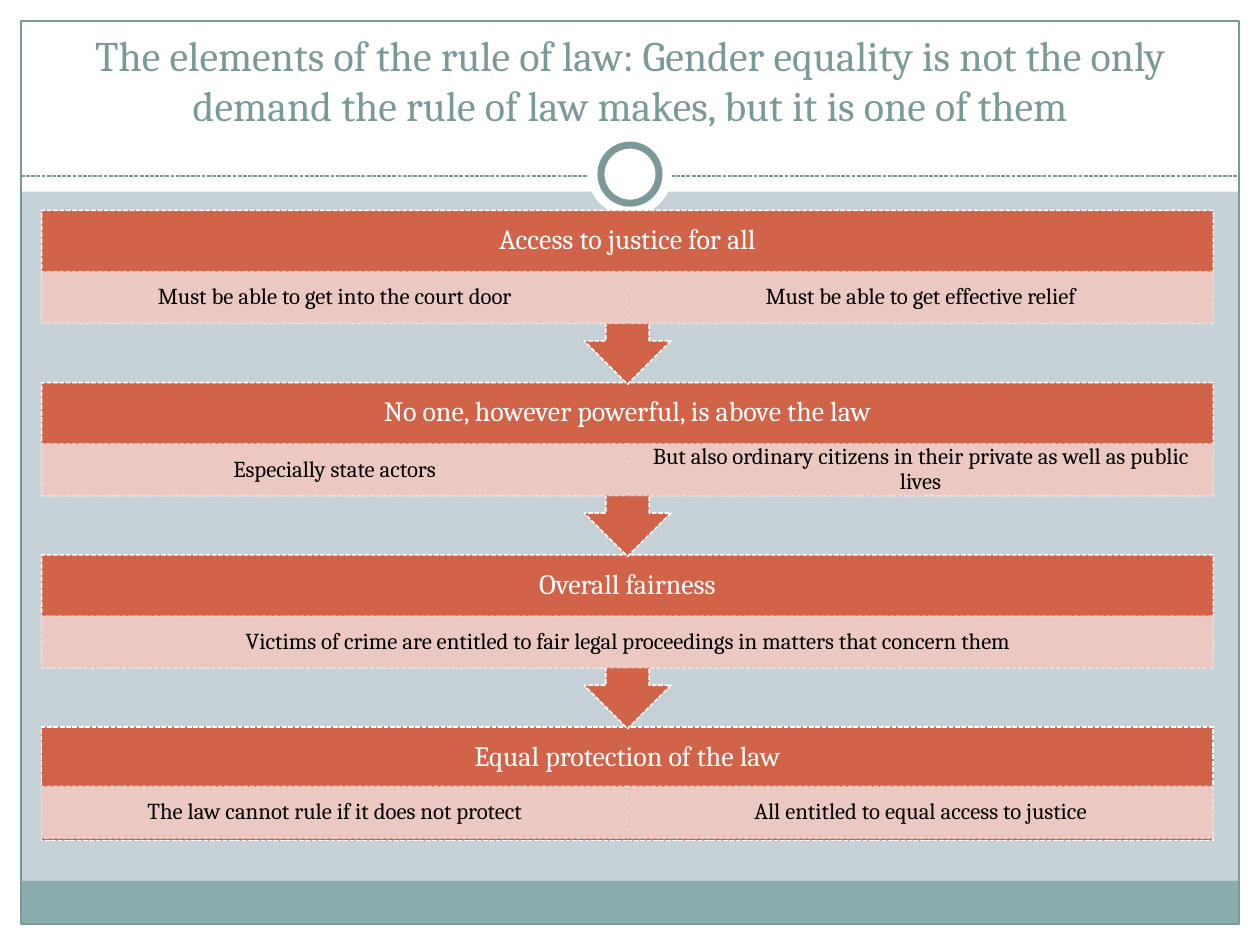
"""Build a slide that shows the elements of the rule of law as four linked steps."""
from lxml.etree import SubElement
from pptx import Presentation
from pptx.dml.color import RGBColor
from pptx.enum.dml import MSO_LINE
from pptx.enum.shapes import MSO_CONNECTOR, MSO_SHAPE
from pptx.enum.text import MSO_ANCHOR, MSO_AUTO_SIZE, PP_ALIGN
from pptx.oxml.ns import qn
from pptx.util import Pt

COLORS = {
    "backdrop": "C5D1D7",
    "white": "FFFFFF",
    "black": "000000",
    "slate": "7C999A",
    "teal": "8CADAE",
    "rust": "D16349",
    "blush": "EED3D0",
}
STEPS = [
    ("Access to justice for all",
     ["Must be able to get into the court door", "Must be able to get effective relief"]),
    ("No one, however powerful, is above the law",
     ["Especially state actors",
      "But also ordinary citizens in their private as well as public lives"]),
    ("Overall fairness",
     ["Victims of crime are entitled to fair legal proceedings in matters that concern them"]),
    ("Equal protection of the law",
     ["The law cannot rule if it does not protect", "All entitled to equal access to justice"]),
]
LEFT, TOP, WIDTH, PITCH = 23.76, 120.24, 669.6, 98.4
CALLOUT_HEIGHT, PANEL_HEIGHT, DETAIL_HEIGHT = 99.36, 64.8, 29.52


class Deck:
    """Hold the style and the current slide."""

    font = "Cambria"

    def __init__(self, width, height):
        """Open a title-only slide of the given size."""
        self.presentation = Presentation()
        self.presentation.slide_width = Pt(width)
        self.presentation.slide_height = Pt(height)
        self.slide = self.presentation.slides.add_slide(self.presentation.slide_layouts[5])
        backdrop = self.slide.background.fill
        backdrop.solid()
        backdrop.fore_color.rgb = self.color("backdrop")

    def color(self, name):
        """Look up a named colour."""
        return RGBColor.from_string(COLORS[name])

    def label(self, holder, text, size, color, anchor=MSO_ANCHOR.MIDDLE, margins=(7.2, 3.6),
              spacing=0.9):
        """Set centred text in a shape."""
        frame = holder.text_frame
        frame.text = text
        frame.word_wrap = True
        frame.auto_size = MSO_AUTO_SIZE.NONE
        frame.vertical_anchor = anchor
        frame.margin_left = frame.margin_right = Pt(margins[0])
        frame.margin_top = frame.margin_bottom = Pt(margins[1])
        paragraph = frame.paragraphs[0]
        paragraph.alignment = PP_ALIGN.CENTER
        paragraph.line_spacing = spacing
        paragraph.font.name = self.font
        paragraph.font.size = Pt(size)
        paragraph.font.color.rgb = self.color(color)

    def stroke(self, line, color, weight, dashed):
        """Style a line or an outline."""
        line.color.rgb = self.color(color)
        line.width = Pt(weight)
        if dashed:
            line.dash_style = MSO_LINE.SQUARE_DOT

    def shape(self, kind, box, fill=None, line=None, weight=0.9, dashed=False):
        """Add a preset shape."""
        shape = self.slide.shapes.add_shape(kind, *map(Pt, box))
        shape.shadow.inherit = False
        if fill:
            shape.fill.solid()
            shape.fill.fore_color.rgb = self.color(fill)
        else:
            shape.fill.background()
        if line:
            self.stroke(shape.line, line, weight, dashed)
        else:
            shape.line.fill.background()
        return shape

    def rule(self, left, right, y):
        """Add a dashed horizontal rule."""
        rule = self.slide.shapes.add_connector(
            MSO_CONNECTOR.STRAIGHT, Pt(left), Pt(y), Pt(right), Pt(y))
        self.stroke(rule.line, "slate", 0.75, True)
        SubElement(rule.element.spPr, qn("a:effectLst"))

    def title(self, text, box):
        """Fill the title and bring it to the front."""
        title = self.slide.shapes.title
        title.left, title.top, title.width, title.height = map(Pt, box)
        self.label(title, text, 24, "slate", MSO_ANCHOR.BOTTOM, spacing=1)
        title.element.getparent().append(title.element)

    def heading(self, text, box):
        """Add the heading of a step."""
        heading = self.slide.shapes.add_textbox(*map(Pt, box))
        self.label(heading, text, 16, "white", margins=(8.64, 8.64))

    def detail(self, text, box):
        """Add a slightly see-through detail cell."""
        cell = self.shape(MSO_SHAPE.RECTANGLE, box, "blush", "blush", dashed=True)
        for tint in cell.element.spPr.iter(qn("a:srgbClr")):
            SubElement(tint, qn("a:alpha"), val="90000")
        self.label(cell, text, 13, "black", margins=(7.2, 1.44))

    def step(self, top, heading, details, last):
        """Add a step, with an arrow to the next one unless it is the last."""
        kind = MSO_SHAPE.RECTANGLE if last else MSO_SHAPE.UP_ARROW_CALLOUT
        height = PANEL_HEIGHT if last else CALLOUT_HEIGHT
        panel = self.shape(kind, (LEFT, top, WIDTH, height), "rust", "white", dashed=True)
        panel.rotation = 0 if last else 180
        self.heading(heading, (LEFT, top, WIDTH, 34.56))
        detail_top = top + (34 if last else 35)
        cell_width = WIDTH / len(details)
        for column, text in enumerate(details):
            self.detail(text, (LEFT + column * cell_width, detail_top, cell_width, DETAIL_HEIGHT))


def main():
    """Build and save the slide."""
    deck = Deck(720, 540)
    for border in [(0, 528, 720, 12), (0, 0, 720, 109.5), (0, 0, 12, 540), (708, 0, 12, 540)]:
        deck.shape(MSO_SHAPE.RECTANGLE, border, "white")
    deck.shape(MSO_SHAPE.RECTANGLE, (12, 503.3, 696, 24.7), "teal")
    deck.shape(MSO_SHAPE.RECTANGLE, (12, 12, 696, 516), line="slate", weight=0.75)
    deck.rule(12, 708, 100.6)
    deck.shape(MSO_SHAPE.OVAL, (336, 75.5, 48, 48), "white")
    deck.shape(MSO_SHAPE.OVAL, (343.4, 82.9, 33.2, 33.2), "white", "slate", 4)
    deck.title("The elements of the rule of law: Gender equality is not the only demand "
               "the rule of law makes, but it is one of them", (24, 18, 672, 60))
    final = len(STEPS) - 1
    for index, (heading, details) in reversed(list(enumerate(STEPS))):
        deck.step(TOP + index * PITCH, heading, details, index == final)
    deck.presentation.save("out.pptx")


if __name__ == "__main__":
    main()
